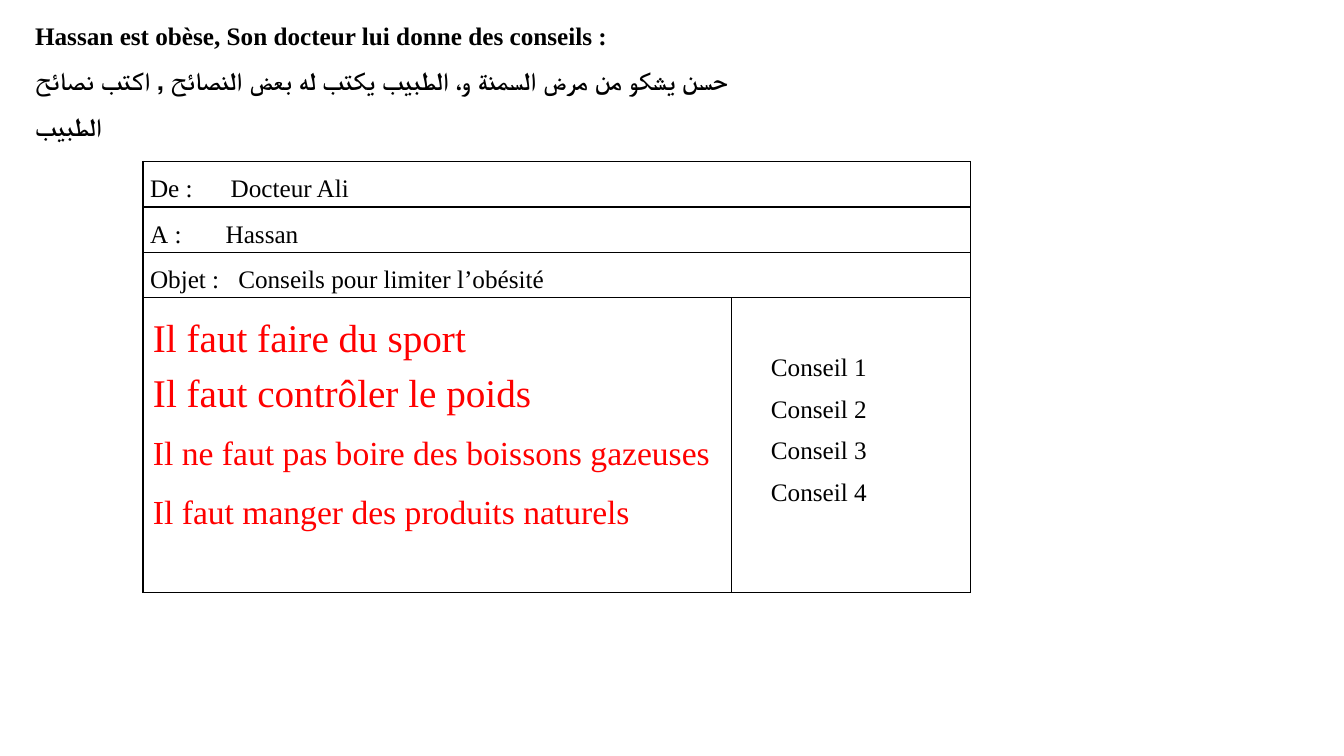
import pptx
import pptx.util
import pptx.dml.color
import pptx.enum.text
import pptx.oxml
import pptx.oxml.ns

Pt = pptx.util.Pt
INK = {"text": "000000", "advice": "FF0000", "rule": "000000"}


class Page:
    font = "Times New Roman"

    def __init__(self, deck):
        self.slide = deck.slides.add_slide(deck.slide_layouts[6])

    def style(self, para, size, color, bold=False, space=None, indent=0):
        font = para.font
        font.name, font.size, font.bold = self.font, Pt(size), bold
        font.color.rgb = pptx.dml.color.RGBColor.from_string(INK[color])
        if space:
            para.line_spacing = space
        if indent:
            para._p.get_or_add_pPr().set("marL", str(Pt(indent)))

    def fill(self, frame, lines, size, color, **look):
        for n, line in enumerate(lines):
            para = frame.add_paragraph() if n else frame.paragraphs[0]
            para.text = line
            self.style(para, size, color, **look)

    def text(self, left, top, width, height, lines, size, color, wrap=False, **look):
        box = self.slide.shapes.add_textbox(Pt(left), Pt(top), Pt(width), Pt(height))
        frame = box.text_frame
        frame.word_wrap = wrap
        frame.auto_size = pptx.enum.text.MSO_AUTO_SIZE.SHAPE_TO_FIT_TEXT
        self.fill(frame, lines, size, color, **look)

    def table(self, left, top, cols, rows):
        shape = self.slide.shapes.add_table(
            len(rows), len(cols), Pt(left), Pt(top), Pt(sum(cols)), Pt(sum(rows)))
        grid = shape.table
        grid.first_row = grid.horz_banding = False
        for col, width in zip(grid.columns, cols):
            col.width = Pt(width)
        for row, height in zip(grid.rows, rows):
            row.height = Pt(height)
        for cell in grid.iter_cells():
            cell.margin_left = cell.margin_right = Pt(5)
            cell.margin_top = cell.margin_bottom = 0
            cell.fill.background()
            self.border(cell)
        return grid

    def border(self, cell):
        props = cell._tc.get_or_add_tcPr()
        for n, side in enumerate(("lnL", "lnR", "lnT", "lnB")):
            props.insert(n, pptx.oxml.parse_xml(
                f'<a:{side} {pptx.oxml.ns.nsdecls("a")} w="{Pt(1)}"><a:solidFill>'
                f'<a:srgbClr val="{INK["rule"]}"/></a:solidFill></a:{side}>'))

    def tab(self, para, stop):
        props = para._p.get_or_add_pPr()
        tabs = pptx.oxml.parse_xml(
            f'<a:tabLst {pptx.oxml.ns.nsdecls("a")}>'
            f'<a:tab pos="{Pt(stop)}" algn="l"/></a:tabLst>')
        props.find(pptx.oxml.ns.qn("a:defRPr")).addprevious(tabs)


def main():
    deck = pptx.Presentation()
    deck.slide_width, deck.slide_height = Pt(960), Pt(540)
    page = Page(deck)

    # Task in French and Arabic
    page.text(-9.4, 0, 581, 68.4, [
        "Hassan est obèse, Son docteur lui donne des conseils :",
        "حسن يشكو من مرض السمنة و، الطبيب يكتب له بعض النصائح , اكتب نصائح الطبيب",
    ], 18, "text", wrap=True, bold=True, space=1.5, indent=27.4)

    # Letter: three header rows, then the body
    left = 102.2
    grid = page.table(left, 115.4, [420.5, 170.6], [32.4] * 3 + [210.5])
    heads = [("De\u00a0:\tDocteur Ali", 57.6), ("A\u00a0:\tHassan", 54),
             ("Objet\u00a0:\tConseils pour limiter l’obésité", 63)]
    for row, (line, stop) in enumerate(heads):
        cell = grid.cell(row, 0)
        cell.merge(grid.cell(row, 1))
        page.fill(cell.text_frame, [line], 18, "text", space=1.5)
        page.tab(cell.text_frame.paragraphs[0], stop)

    # Numbered labels beside the advice
    side = grid.cell(3, 1)
    side.margin_top = Pt(30)
    page.fill(side.text_frame, [f"Conseil {n}" for n in range(1, 5)],
              18, "text", space=1.5, indent=23)

    # Advice
    for top, width, height, size, line in [
        (220.3, 247.7, 63.4, 28, "Il faut faire du sport"),
        (259.2, 294.5, 63.4, 28, "Il faut contrôler le poids"),
        (305.3, 428.4, 58.3, 24, "Il ne faut pas boire des boissons gazeuses"),
        (347, 364.3, 58.3, 24, "Il faut manger des produits naturels"),
    ]:
        page.text(left, top, width, height, [line], size, "advice")

    deck.save("out.pptx")


if __name__ == "__main__":
    main()
